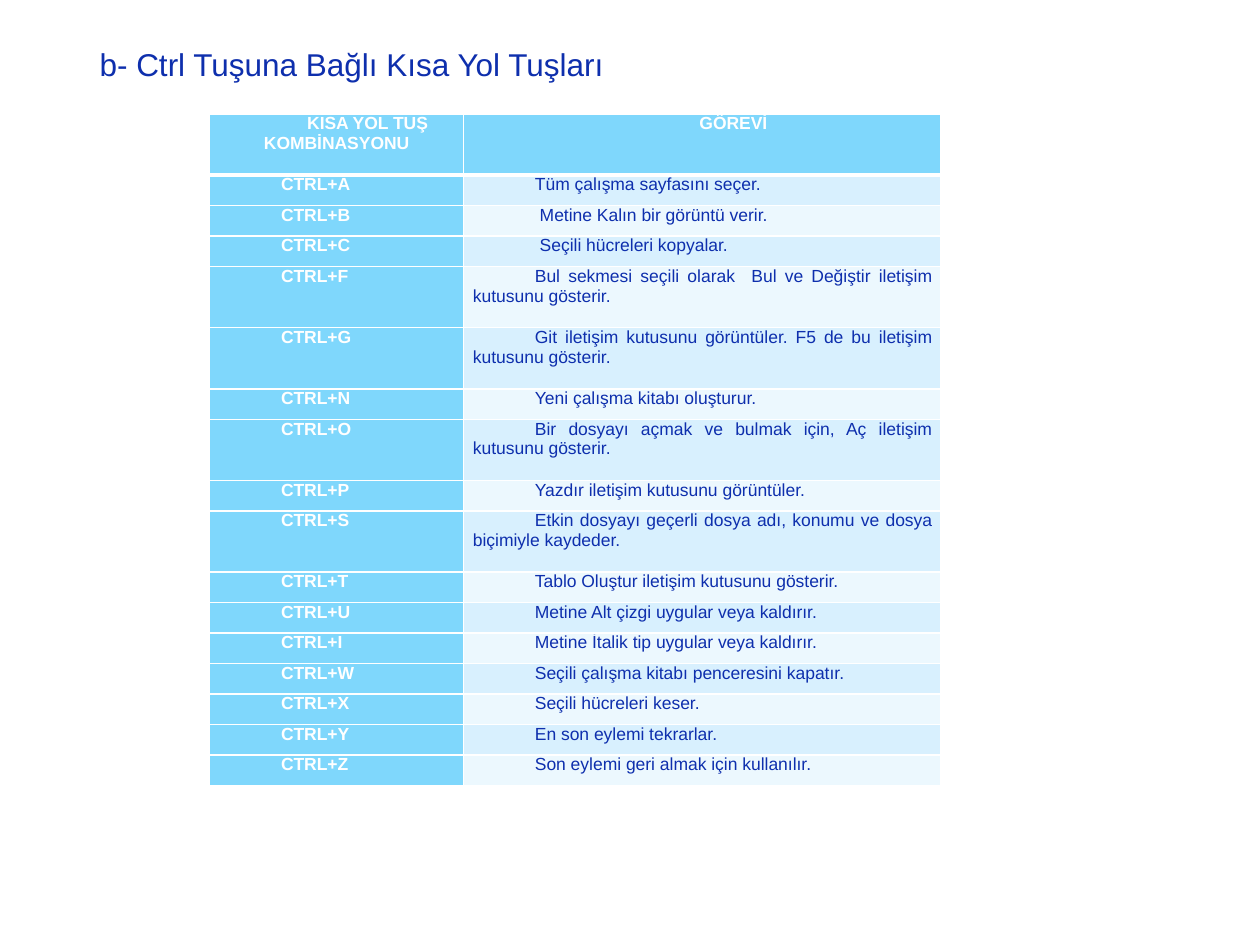
from lxml.etree import SubElement
from pptx import Presentation
from pptx.dml.color import RGBColor
from pptx.enum.text import MSO_ANCHOR, MSO_AUTO_SIZE, PP_ALIGN
from pptx.oxml.ns import qn
from pptx.util import Pt

WHITE, NAVY, SKY = "FFFFFF", "0E2FAD", "7FD7FC"
BANDS = ("D8F0FE", "ECF8FE")
ROW_UNIT = 17.45
FIRST_LINE_INDENT = 35.4

HEADER = ("KISA YOL TUŞ KOMBİNASYONU", "GÖREVİ", 2)
# Key, task and number of row units
SHORTCUTS = [
    ("A", "Tüm çalışma sayfasını seçer.", 1),
    ("B", " Metine Kalın bir görüntü verir.", 1),
    ("C", " Seçili hücreleri kopyalar.", 1),
    ("F", "Bul sekmesi seçili olarak  Bul ve Değiştir iletişim kutusunu gösterir.", 2),
    ("G", "Git iletişim kutusunu görüntüler. F5 de bu iletişim kutusunu gösterir.", 2),
    ("N", "Yeni çalışma kitabı oluşturur.", 1),
    ("O", "Bir dosyayı açmak ve bulmak için, Aç iletişim kutusunu gösterir.", 2),
    ("P", "Yazdır iletişim kutusunu görüntüler.", 1),
    ("S", "Etkin dosyayı geçerli dosya adı, konumu ve dosya biçimiyle kaydeder.", 2),
    ("T", "Tablo Oluştur iletişim kutusunu gösterir.", 1),
    ("U", "Metine Alt çizgi uygular veya kaldırır.", 1),
    ("I", "Metine İtalik tip uygular veya kaldırır.", 1),
    ("W", "Seçili çalışma kitabı penceresini kapatır.", 1),
    ("X", "Seçili hücreleri keser.", 1),
    ("Y", "En son eylemi tekrarlar.", 1),
    ("Z", "Son eylemi geri almak için kullanılır.", 1),
]


def add_run(paragraph, text, size, color, bold=False):
    run = paragraph.add_run()
    run.text = text
    run.font.name = "Arial"
    run.font.size = Pt(size)
    run.font.bold = bold
    run.font.color.rgb = RGBColor.from_string(color)


def add_borders(cell, top, bottom):
    """Draw white cell borders; top and bottom are widths in points."""
    properties = cell._tc.get_or_add_tcPr()
    for side, width in (("L", 1), ("R", 1), ("T", top), ("B", bottom)):
        line = SubElement(properties, qn(f"a:ln{side}"), w=str(Pt(width)))
        fill = SubElement(line, qn("a:solidFill"))
        SubElement(fill, qn("a:srgbClr"), val=WHITE)


prs = Presentation()
prs.slide_width, prs.slide_height = Pt(720), Pt(540)
slide = prs.slides.add_slide(prs.slide_layouts[5])

title = slide.shapes.title
title.left, title.top, title.width, title.height = Pt(49.7), Pt(22.3), Pt(305.3), Pt(28.8)
title_frame = title.text_frame
title_frame.word_wrap = False
title_frame.auto_size = MSO_AUTO_SIZE.SHAPE_TO_FIT_TEXT
title_frame.vertical_anchor = MSO_ANCHOR.TOP
title_frame.paragraphs[0].alignment = PP_ALIGN.LEFT
add_run(title_frame.paragraphs[0], "b- Ctrl Tuşuna Bağlı Kısa Yol Tuşları", 18, NAVY)

rows = [HEADER] + [(f"CTRL+{key}", task, units) for key, task, units in SHORTCUTS]
table_height = ROW_UNIT * sum(units for _, _, units in rows)
shortcut_table = slide.shapes.add_table(
    len(rows), 2, Pt(119.8), Pt(65.2), Pt(418.1), Pt(table_height)).table
shortcut_table.horz_banding = False
shortcut_table.columns[0].width = Pt(145.1)
shortcut_table.columns[1].width = Pt(273)

for r, (combination, task, units) in enumerate(rows):
    shortcut_table.rows[r].height = Pt(ROW_UNIT * units)
    for c, text in enumerate((combination, task)):
        cell = shortcut_table.cell(r, c)
        is_header = r == 0
        is_label = is_header or c == 0
        cell.margin_left = cell.margin_right = Pt(5.4)
        cell.margin_top = cell.margin_bottom = 0
        add_borders(cell, top=3 if r == 1 else 1, bottom=3 if is_header else 1)
        cell.fill.solid()
        cell.fill.fore_color.rgb = RGBColor.from_string(
            SKY if is_label else BANDS[(r - 1) % 2])

        paragraph = cell.text_frame.paragraphs[0]
        if is_header:
            paragraph.alignment = PP_ALIGN.CENTER
        else:
            paragraph.alignment = PP_ALIGN.JUSTIFY if c else PP_ALIGN.LEFT
        indent = paragraph._p.get_or_add_pPr()
        indent.set("marL", "0")
        indent.set("indent", str(Pt(FIRST_LINE_INDENT)))
        add_run(paragraph, text, 10, WHITE if is_label else NAVY, bold=is_label)

prs.save("out.pptx")
